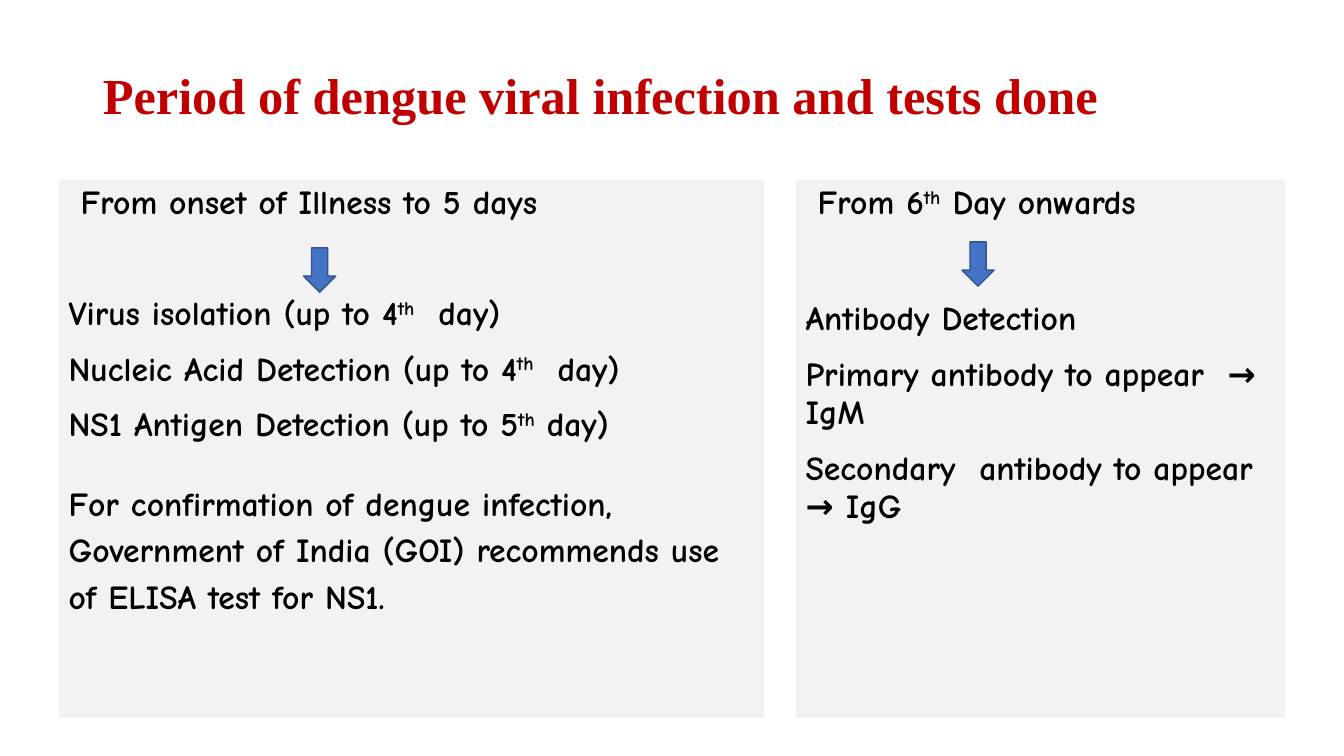
"""Builds a slide on the periods of dengue infection and the tests done in each."""
from lxml.etree import SubElement
from pptx import Presentation
from pptx.dml.color import RGBColor
from pptx.enum.shapes import MSO_SHAPE as Shape
from pptx.enum.text import MSO_ANCHOR as Anchor, MSO_AUTO_SIZE as Fit, PP_ALIGN as Align
from pptx.oxml.ns import qn
from pptx.util import Inches, Pt


def color(code):
    return RGBColor.from_string(code)


def style(run, face, size, code):
    font = run.font
    font.name, font.size, font.bold = face, Pt(size), True
    font.color.rgb = color(code)


deck = Presentation()
deck.slide_width, deck.slide_height = Inches(13.33), Inches(7.5)
slide = deck.slides.add_slide(deck.slide_layouts[5])

title = slide.shapes.title
title.left, title.top = Inches(0.92), Inches(0.4)
title.width, title.height = Inches(11.5), Inches(1.14)
frame = title.text_frame
frame.text = "Period of dengue viral infection and tests done"
frame.auto_size, frame.word_wrap = Fit.NONE, True
frame.vertical_anchor = Anchor.MIDDLE
head = frame.paragraphs[0]
head.alignment, head.line_spacing = Align.LEFT, 0.9
style(head.runs[0], "Times New Roman", 36, "C00000")

early = [
    (" From onset of Illness to 5 days", 0, 0, 1),
    ("Virus isolation (up to 4^th^  day)", 51.6, 12, 1),
    ("Nucleic Acid Detection (up to 4^th^  day)", 0, 12, 1),
    ("NS1 Antigen Detection (up to 5^th^ day)", 0, 24, 1),
    ("For confirmation of dengue infection, Government of India (GOI) "
     "recommends use of ELISA test for NS1.", 0, 12, 1.2),
]
late = [
    (" From 6^th^ Day onwards", 0, 0, 1),
    ("Antibody Detection", 55.2, 12, 1),
    ("Primary antibody to appear  → IgM", 0, 12, 1),
    ("Secondary  antibody to appear → IgG", 0, 12, 1),
]
panels = [(0.58, 7, early, 3.01, 2.46), (7.89, 4.86, late, 9.54, 2.4)]
edges = [("a:lnL", 1), ("a:lnR", 1), ("a:lnT", 1), ("a:lnB", 3)]

for left, width, lines, x, y in panels:
    grid = slide.shapes.add_table(1, 1, Inches(left), Inches(1.78),
                                  Inches(width), Inches(5.36))
    cell = grid.table.cell(0, 0)
    props = cell._tc.get_or_add_tcPr()
    for tag, weight in edges:
        edge = SubElement(props, qn(tag), w=str(Pt(weight)))
        fill = SubElement(edge, qn("a:solidFill"))
        SubElement(fill, qn("a:srgbClr"), val="FFFFFF")
    cell.fill.solid()
    cell.fill.fore_color.rgb = color("F2F2F2")

    for row, (text, before, after, pitch) in enumerate(lines):
        frame = cell.text_frame
        para = frame.add_paragraph() if row else frame.paragraphs[0]
        para.space_before, para.space_after = Pt(before), Pt(after)
        para.line_spacing = float(pitch)
        for part, words in enumerate(text.split("^")):
            run = para.add_run()
            run.text = words
            style(run, "Comic Neue", 24, "000000")
            if part % 2:
                run.font._element.set("baseline", "30000")

    arrow = slide.shapes.add_shape(Shape.DOWN_ARROW, Inches(x), Inches(y),
                                   Inches(0.32), Inches(0.44))
    arrow.shadow.inherit = False
    arrow.fill.solid()
    arrow.fill.fore_color.rgb = color("4472C4")
    arrow.line.color.rgb = color("325491")
    arrow.line.width = Pt(1)

deck.save("out.pptx")
